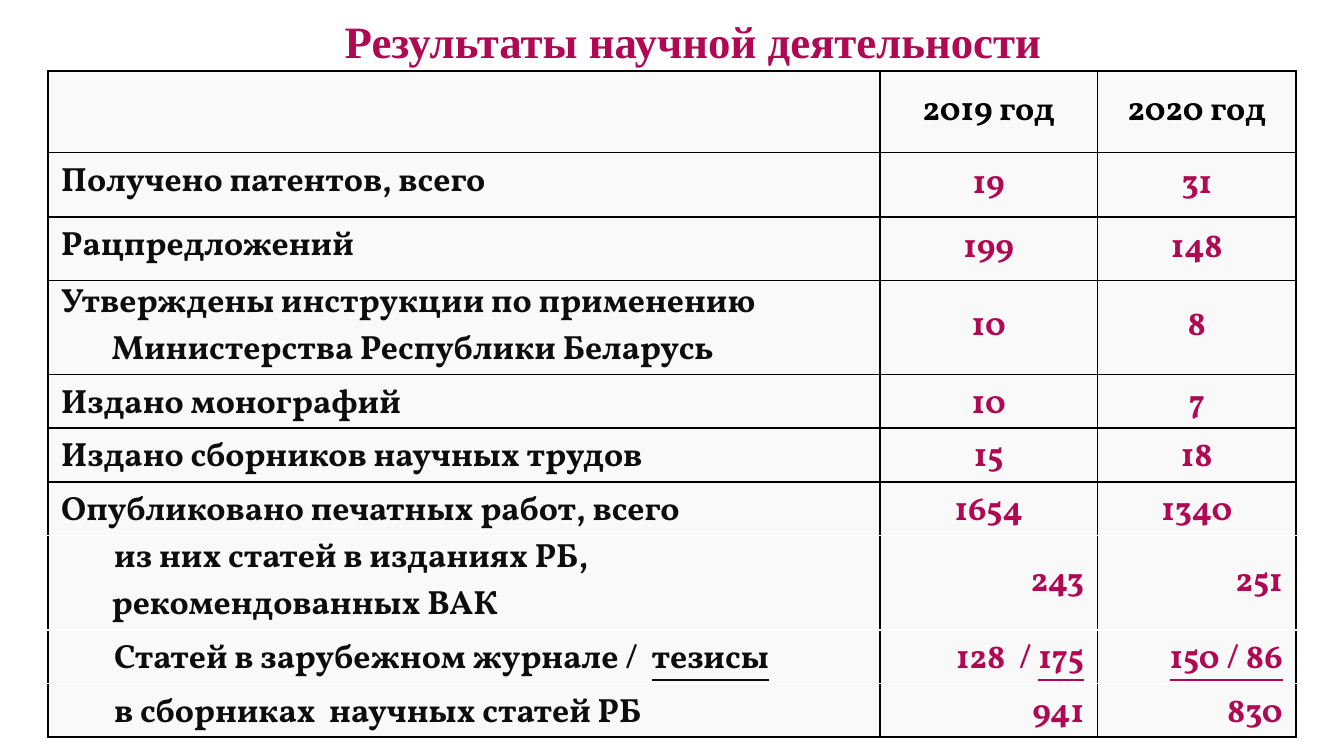
"""Build the slide with the table of research results for 2019 and 2020."""
import lxml.etree
import pptx
import pptx.dml.color
import pptx.enum.text
import pptx.oxml.ns
import pptx.util

Pt = pptx.util.Pt
RGBColor = pptx.dml.color.RGBColor
ALIGN = pptx.enum.text.PP_ALIGN
ANCHOR = pptx.enum.text.MSO_ANCHOR
qn = pptx.oxml.ns.qn

CRIMSON = RGBColor(0xAF, 0x09, 0x54)
BLACK = RGBColor(0x00, 0x00, 0x00)
NEAR_BLACK = RGBColor(0x0D, 0x0D, 0x0D)
WHITE = RGBColor(0xFF, 0xFF, 0xFF)
LIGHT_GRAY = RGBColor(0xF2, 0xF2, 0xF2)

TITLE = "Результаты научной деятельности"
YEARS = ("2019 год", "2020 год")
UNDERLINED = {"тезисы", "175", "150 / 86"}
COMPACT, DOUBLE = 28.8, 50.4
TOTALS = [
    (43.6, ("",), *((year,) for year in YEARS)),
    (34.6, ("Получено патентов, всего",), ("19",), ("31",)),
    (34, ("Рацпредложений",), ("199",), ("148",)),
    (DOUBLE, ("Утверждены инструкции по применению Министерства Республики Беларусь",),
     ("10",), ("8",)),
    (COMPACT, ("Издано монографий",), ("10",), ("7",)),
    (COMPACT, ("Издано сборников научных трудов",), ("15",), ("18",)),
    (COMPACT, ("Опубликовано печатных работ, всего",), ("1654",), ("1340",)),
]
DETAILS = [
    (DOUBLE, ("из них статей в изданиях РБ, рекомендованных ВАК",), ("243",), ("251",)),
    (COMPACT, ("Статей в зарубежном журнале /  ", "тезисы"), ("128  / ", "175"), ("150 / 86",)),
    (COMPACT, ("в сборниках  научных статей РБ",), ("941",), ("830",)),
]
COLUMN_WIDTHS = (445.8, 116.6, 106.4)


def format_font(font, name, size, color):
    """Set a bold font with the given name, size and colour."""
    font.name, font.size, font.bold = name, Pt(size), True
    font.color.rgb = color


def add_title(slide):
    """Fill and place the title placeholder."""
    title = slide.shapes.title
    title.left, title.top, title.width, title.height = Pt(82.2), Pt(3.8), Pt(578), Pt(36)
    frame = title.text_frame
    frame.text = TITLE
    frame.auto_size = pptx.enum.text.MSO_AUTO_SIZE.NONE
    frame.vertical_anchor = ANCHOR.MIDDLE
    paragraph = frame.paragraphs[0]
    paragraph.alignment = ALIGN.CENTER
    format_font(paragraph.runs[0].font, "Times New Roman", 24, CRIMSON)


def style_cell(cell, top, bottom):
    """Give a cell its translucent fill and one-point borders."""
    cell.fill.solid()
    cell.fill.fore_color.rgb = LIGHT_GRAY
    properties = cell._tc.tcPr
    fill_color = properties.find(f".//{qn('a:srgbClr')}")
    lxml.etree.SubElement(fill_color, qn("a:alpha"), val="40000")
    borders = (("a:lnL", BLACK), ("a:lnR", BLACK), ("a:lnT", top), ("a:lnB", bottom))
    for position, (tag, color) in enumerate(borders):
        line = lxml.etree.Element(qn(tag), w=str(Pt(1)))
        solid = lxml.etree.SubElement(line, qn("a:solidFill"))
        lxml.etree.SubElement(solid, qn("a:srgbClr"), val=str(color))
        properties.insert(position, line)


def write_cell(cell, parts, color, alignment):
    """Write the runs of a cell and underline the marked ones."""
    paragraph = cell.text_frame.paragraphs[0]
    paragraph.alignment = alignment
    for part in parts:
        run = paragraph.add_run()
        run.text = part
        format_font(run.font, "Vollkorn", 18, color)
        if part in UNDERLINED:
            run.font.underline = True


def indent_label(cell, first_line):
    """Set the left margin and first-line indent of a row label."""
    properties = cell.text_frame.paragraphs[0]._p.get_or_add_pPr()
    properties.set("marL", str(Pt(27)))
    properties.set("indent", str(Pt(first_line)))


def fit_margins(cell, row_height, is_label):
    """Trim the vertical margins so that the text fits the row height."""
    if row_height == COMPACT:
        cell.margin_bottom = Pt(0)
    elif row_height == DOUBLE and is_label:
        cell.margin_top = cell.margin_bottom = Pt(0)


def add_results_table(slide):
    """Add the table of totals followed by the detailed rows."""
    rows = TOTALS + DETAILS
    height = sum(row[0] for row in rows)
    table = slide.shapes.add_table(
        len(rows), len(COLUMN_WIDTHS), Pt(25.6), Pt(38), Pt(sum(COLUMN_WIDTHS)), Pt(height)
    ).table
    table.first_row = table.horz_banding = False
    for column, width in zip(table.columns, COLUMN_WIDTHS):
        column.width = Pt(width)
    for row_index, (row_height, *contents) in enumerate(rows):
        table.rows[row_index].height = Pt(row_height)
        is_detail = row_index >= len(TOTALS)
        opens_detail = len(TOTALS) - 1 <= row_index < len(rows) - 1
        for column_index, parts in enumerate(contents):
            cell = table.cell(row_index, column_index)
            style_cell(cell, WHITE if is_detail else BLACK, WHITE if opens_detail else BLACK)
            fit_margins(cell, row_height, column_index == 0)
            if column_index == 0:
                write_cell(cell, parts, NEAR_BLACK, ALIGN.LEFT)
                indent_label(cell, 1.4 if is_detail else -27)
            else:
                color = BLACK if row_index == 0 else CRIMSON
                write_cell(cell, parts, color, ALIGN.RIGHT if is_detail else ALIGN.CENTER)
                cell.vertical_anchor = ANCHOR.MIDDLE


def main():
    """Create and save the presentation."""
    presentation = pptx.Presentation()
    presentation.slide_width, presentation.slide_height = Pt(720), Pt(405)
    slide = presentation.slides.add_slide(presentation.slide_layouts.get_by_name("Title Only"))
    add_title(slide)
    add_results_table(slide)
    presentation.save("out.pptx")


if __name__ == "__main__":
    main()
